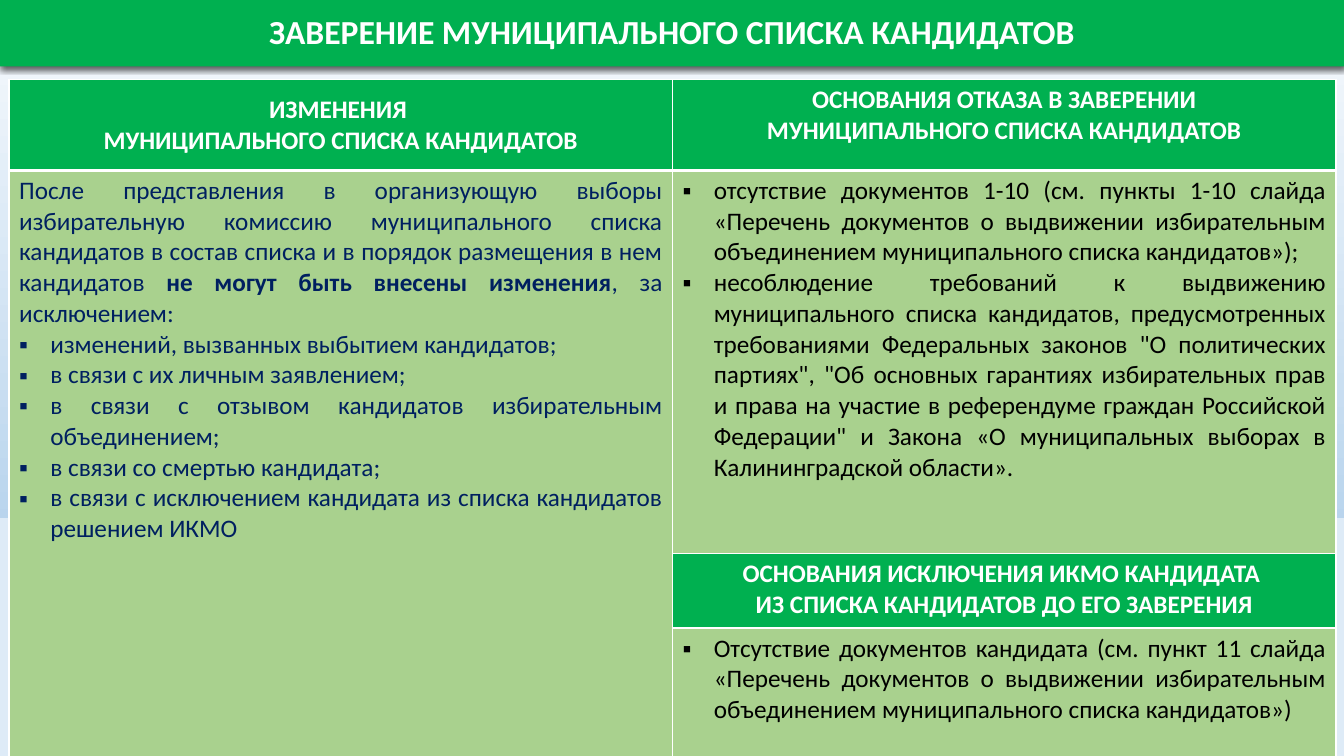
from dataclasses import dataclass

from lxml.etree import SubElement
from pptx import Presentation
from pptx.dml.color import RGBColor
from pptx.enum.shapes import MSO_SHAPE
from pptx.enum.text import MSO_ANCHOR, MSO_AUTO_SIZE, PP_ALIGN
from pptx.oxml import parse_xml
from pptx.oxml.ns import nsdecls, qn
from pptx.util import Inches, Pt


@dataclass(frozen=True)
class Theme:
    font: str = "Calibri"
    title_size: int = 24
    body_size: int = 18
    green: str = "00B050"
    light_green: str = "A9D18E"
    pale_blue: str = "DEEBF7"
    navy: str = "002060"
    black: str = "000000"
    white: str = "FFFFFF"
    gradient: tuple = ((0, "F7FAFD"), (74, "B5D2EC"), (83, "B5D2EC"), (100, "CEE1F2"))


THEME = Theme()
INDENT = Inches(0.31)

HEAD_CHANGES = ["ИЗМЕНЕНИЯ ", "МУНИЦИПАЛЬНОГО СПИСКА КАНДИДАТОВ"]
HEAD_REFUSAL = ["ОСНОВАНИЯ ОТКАЗА В ЗАВЕРЕНИИ", "МУНИЦИПАЛЬНОГО СПИСКА КАНДИДАТОВ"]
HEAD_EXCLUSION = ["ОСНОВАНИЯ ИСКЛЮЧЕНИЯ ИКМО КАНДИДАТА ", "ИЗ СПИСКА КАНДИДАТОВ ДО ЕГО ЗАВЕРЕНИЯ"]
# A paragraph is a string, or a list of (text, bold) pairs
CHANGES_INTRO = [
    ("После представления в организующую выборы избирательную комиссию муниципального списка "
     "кандидатов в состав списка и в порядок размещения в нем кандидатов ", False),
    ("не могут быть внесены изменения", True),
    (", за исключением:", False),
]
CHANGES = [
    "изменений, вызванных выбытием кандидатов;",
    "в связи с их личным заявлением;",
    "в связи с отзывом кандидатов избирательным объединением;",
    "в связи со смертью кандидата;",
    "в связи с исключением кандидата из списка кандидатов решением ИКМО",
]
REFUSAL = [
    "отсутствие документов 1-10 (см. пункты 1-10 слайда «Перечень документов о выдвижении "
    "избирательным объединением муниципального списка кандидатов»);",
    "несоблюдение требований к выдвижению муниципального списка кандидатов, предусмотренных "
    "требованиями Федеральных законов \"О политических партиях\", \"Об основных гарантиях "
    "избирательных прав и права на участие в референдуме граждан Российской Федерации\" "
    "и Закона «О муниципальных выборах в Калининградской области». ",
]
EXCLUSION = [
    "Отсутствие документов кандидата (см. пункт 11 слайда «Перечень документов о выдвижении "
    "избирательным объединением муниципального списка кандидатов»)",
]


def set_fill(fill, color):
    fill.solid()
    fill.fore_color.rgb = RGBColor.from_string(color)


def add_bullet(p):
    pPr = p._p.get_or_add_pPr()
    pPr.set("marL", str(INDENT))
    pPr.set("indent", str(-INDENT))
    SubElement(pPr, qn("a:buFont"), typeface="Arial")
    SubElement(pPr, qn("a:buChar"), char="▪")


def write(tf, paragraphs, color=THEME.white, size=THEME.body_size, bold=False,
          align=PP_ALIGN.JUSTIFY, bullets=False, spacing=None, append=False):
    """Write the paragraphs into a text frame, or add them after its text."""
    for i, content in enumerate(paragraphs):
        p = tf.add_paragraph() if append or i else tf.paragraphs[0]
        p.alignment = align
        if spacing:
            p.line_spacing = spacing
        if bullets:
            add_bullet(p)
        runs = [(content, bold)] if isinstance(content, str) else content
        for text, is_bold in runs:
            r = p.add_run()
            r.text = text
            r.font.name = THEME.font
            r.font.size = Pt(size)
            r.font.bold = is_bold
            r.font.color.rgb = RGBColor.from_string(color)


def set_background(s):
    fill = s.background.fill
    fill.gradient()
    gradient = fill._fill._gradFill
    stops = gradient.find(qn("a:gsLst"))
    for stop in list(stops):
        stops.remove(stop)
    for position, color in THEME.gradient:
        stop = SubElement(stops, qn("a:gs"), pos=str(position * 1000))
        SubElement(stop, qn("a:srgbClr"), val=color)
    gradient.find(qn("a:lin")).set("ang", "5400000")


def add_title(s, text):
    sp = s.shapes.title
    sp.left, sp.top, sp.width, sp.height = 0, 0, Inches(13.33), Inches(0.66)
    set_fill(sp.fill, THEME.green)
    sp._element.spPr.append(parse_xml(
        f'<a:effectLst {nsdecls("a")}><a:outerShdw blurRad="{Pt(4.5)}" dist="{Pt(1.5)}" '
        f'dir="5400000" algn="ctr" rotWithShape="0"><a:srgbClr val="{THEME.black}">'
        '<a:alpha val="63000"/></a:srgbClr></a:outerShdw></a:effectLst>'))
    tf = sp.text_frame
    tf.auto_size = MSO_AUTO_SIZE.NONE
    tf.vertical_anchor = MSO_ANCHOR.MIDDLE
    write(tf, [text], size=THEME.title_size, bold=True, align=PP_ALIGN.CENTER, spacing=0.9)


def add_band(s, top, height):
    sp = s.shapes.add_shape(MSO_SHAPE.RECTANGLE, 0, Inches(top), Inches(13.33), Inches(height))
    sp.shadow.inherit = False
    set_fill(sp.fill, THEME.pale_blue)
    sp.line.fill.background()


def set_borders(cell, top=1, bottom=1):
    tcPr = cell._tc.get_or_add_tcPr()
    for i, (side, width) in enumerate((("L", 1), ("R", 1), ("T", top), ("B", bottom))):
        tcPr.insert(i, parse_xml(
            f'<a:ln{side} {nsdecls("a")} w="{Pt(width)}"><a:solidFill>'
            f'<a:srgbClr val="{THEME.white}"/></a:solidFill></a:ln{side}>'))


def add_grid(s, left, top, widths, heights):
    """Add a table with white rules and a thick rule under its first row."""
    frame = s.shapes.add_table(len(heights), len(widths), Inches(left), Inches(top),
                               Inches(sum(widths)), Inches(sum(heights)))
    table = frame.table
    table.first_row = table.horz_banding = False
    for column, width in zip(table.columns, widths):
        column.width = Inches(width)
    for i, (row, height) in enumerate(zip(table.rows, heights)):
        row.height = Inches(height)
        for cell in row.cells:
            set_fill(cell.fill, THEME.light_green)
            set_borders(cell, top=3 if i == 1 else 1, bottom=3 if i == 0 else 1)
    return table


def fill_header(cell, lines, anchor=MSO_ANCHOR.TOP):
    set_fill(cell.fill, THEME.green)
    cell.vertical_anchor = anchor
    write(cell.text_frame, lines, bold=True, align=PP_ALIGN.CENTER)


def main():
    prs = Presentation()
    prs.slide_width, prs.slide_height = Inches(13.33), Inches(7.5)
    s = prs.slides.add_slide(prs.slide_layouts[5])

    # Backdrop and title
    set_background(s)
    add_title(s, "ЗАВЕРЕНИЕ МУНИЦИПАЛЬНОГО СПИСКА КАНДИДАТОВ")
    add_band(s, 5.14, 2.36)

    # Table with the left column merged below its header
    table = add_grid(s, 0.09, 0.79, [6.58] * 2, [0.9, 3.8, 0.74, 1.28])
    table.cell(1, 0).merge(table.cell(3, 0))

    # Headers
    fill_header(table.cell(0, 0), HEAD_CHANGES, anchor=MSO_ANCHOR.MIDDLE)
    fill_header(table.cell(0, 1), HEAD_REFUSAL)
    fill_header(table.cell(2, 1), HEAD_EXCLUSION)

    # Body text
    changes = table.cell(1, 0).text_frame
    write(changes, [CHANGES_INTRO], color=THEME.navy)
    write(changes, CHANGES, color=THEME.navy, bullets=True, append=True)
    write(table.cell(1, 1).text_frame, REFUSAL, color=THEME.black, bullets=True)
    write(table.cell(3, 1).text_frame, EXCLUSION, color=THEME.black, bullets=True)

    prs.save("out.pptx")


if __name__ == "__main__":
    main()
